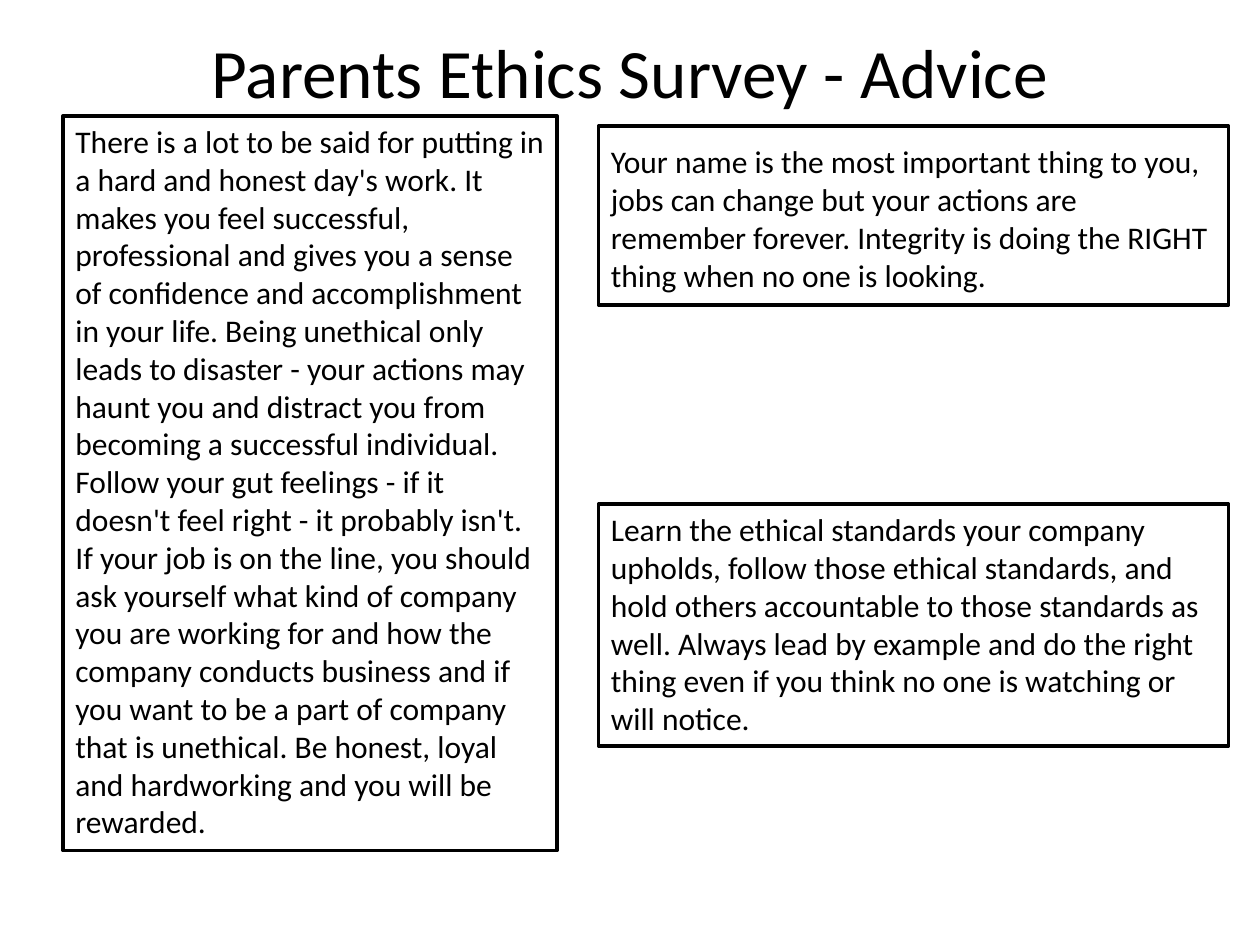
from dataclasses import dataclass
from pptx import Presentation
from pptx.dml.color import RGBColor
from pptx.enum.shapes import MSO_SHAPE
from pptx.enum.text import MSO_ANCHOR, PP_ALIGN
from pptx.util import Inches, Pt

RECTANGLE = MSO_SHAPE.RECTANGLE
LEFT, CENTER = PP_ALIGN.LEFT, PP_ALIGN.CENTER
TOP, MIDDLE = MSO_ANCHOR.TOP, MSO_ANCHOR.MIDDLE

COLORS = {"ink": "000000"}
FONT = "Calibri"
CELL = 0.25
COLUMNS, ROWS = 40, 30


@dataclass(frozen=True)
class Area:
    column: float
    row: float
    columns: float
    rows: float

    def box(self) -> list[int]:
        return [Inches(cells * CELL) for cells in
                (self.column, self.row, self.columns, self.rows)]


@dataclass(frozen=True)
class Advice:
    quote: str
    quote_area: Area
    border_area: Area


TITLE_AREA = Area(2, 1.2, 36, 2.12)
COMPANY_AREA = Area(19, 16, 20, 7.68)

ADVICE = [
    Advice(
        "There is a lot to be said for putting in a hard and honest day's work. "
        "It makes you feel successful, professional and gives you a sense of "
        "confidence and accomplishment in your life. Being unethical only leads "
        "to disaster - your actions may haunt you and distract you from becoming "
        "a successful individual. Follow your gut feelings - if it doesn't feel "
        "right - it probably isn't. If your job is on the line, you should ask "
        "yourself what kind of company you are working for and how the company "
        "conducts business and if you want to be a part of company that is "
        "unethical. Be honest, loyal and hardworking and you will be rewarded.",
        Area(2, 3.68, 15.68, 23.44), Area(2, 3.68, 15.68, 23.32)),
    Advice(
        "Your name is the most important thing to you, jobs can change but your "
        "actions are remember forever. Integrity is doing the RIGHT thing when "
        "no one is looking.",
        Area(19, 4.32, 20, 5.24), Area(19, 4, 20, 5.68)),
    Advice(
        "Learn the ethical standards your company upholds, follow those ethical "
        "standards, and hold others accountable to those standards as well. "
        "Always lead by example and do the right thing even if you think no one "
        "is watching or will notice.",
        COMPANY_AREA, COMPANY_AREA),
]


def write_text(holder, text: str, *, size: float = 18, color: str = "ink",
               align=LEFT, anchor=TOP) -> None:
    frame = holder.text_frame
    frame.word_wrap = True
    frame.vertical_anchor = anchor
    paragraph = frame.paragraphs[0]
    paragraph.alignment = align
    run = paragraph.add_run()
    run.text = text
    run.font.name = FONT
    run.font.size = Pt(size)
    run.font.color.rgb = RGBColor.from_string(COLORS[color])


def draw_border(slide, area: Area) -> None:
    border = slide.shapes.add_shape(RECTANGLE, *area.box())
    border.shadow.inherit = False
    border.fill.background()
    border.line.color.rgb = RGBColor.from_string(COLORS["ink"])
    border.line.width = Pt(2)


def draw_advice(slide, advice: Advice) -> None:
    quote = slide.shapes.add_textbox(*advice.quote_area.box())
    write_text(quote, advice.quote)
    draw_border(slide, advice.border_area)


def main() -> None:
    deck = Presentation()
    deck.slide_width = Inches(COLUMNS * CELL)
    deck.slide_height = Inches(ROWS * CELL)
    slide = deck.slides.add_slide(deck.slide_layouts.get_by_name("Title Only"))

    title = slide.shapes.title
    title.left, title.top, title.width, title.height = TITLE_AREA.box()
    write_text(title, "Parents Ethics Survey - Advice", size=39.6,
               align=CENTER, anchor=MIDDLE)

    for advice in ADVICE:
        draw_advice(slide, advice)

    deck.save("out.pptx")


if __name__ == "__main__":
    main()
